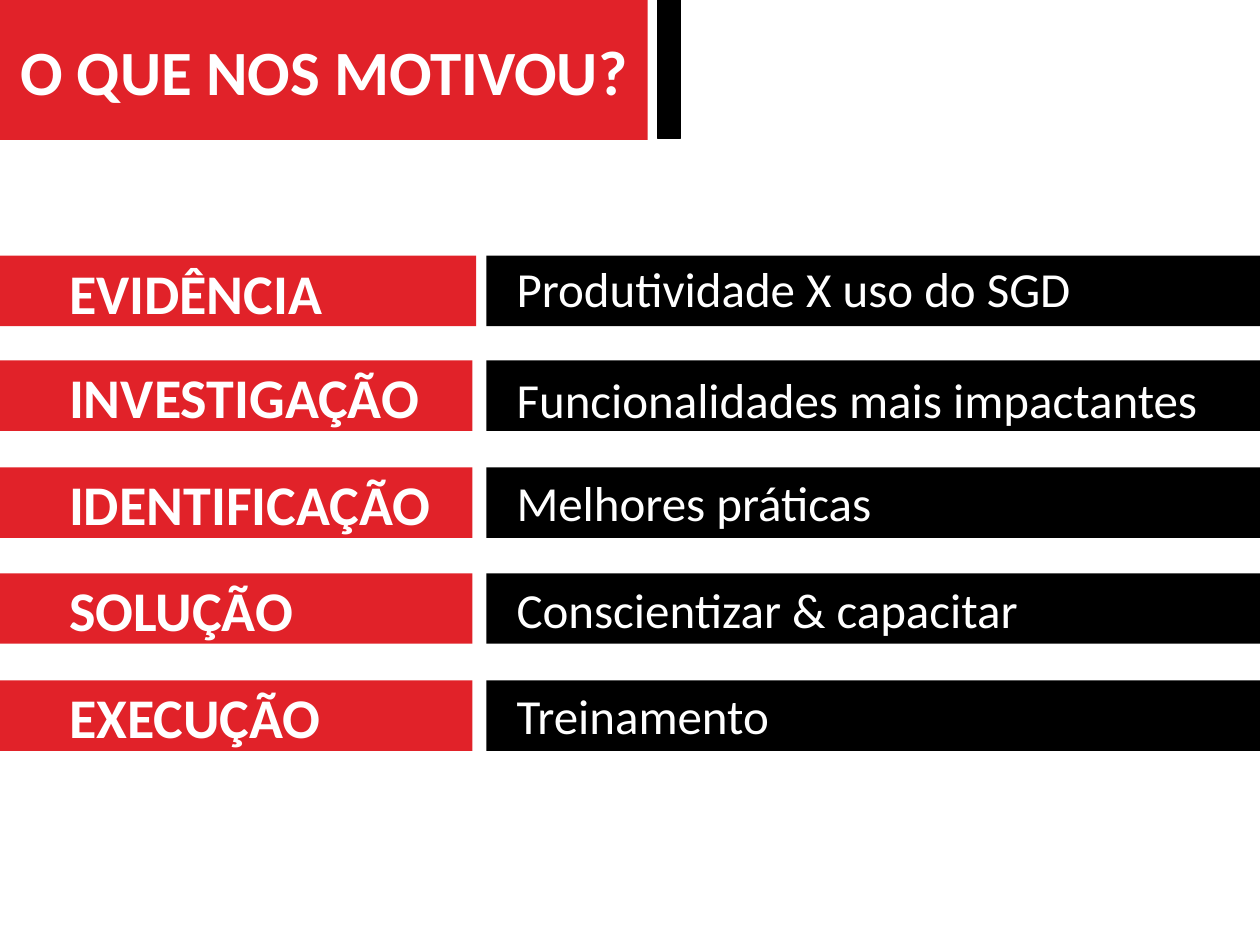
from pptx import Presentation
from pptx import util as u
from pptx.dml.color import RGBColor
from pptx.enum import shapes, text

RED = RGBColor(0xE1, 0x22, 0x29)
BLACK = RGBColor(0, 0, 0)
WHITE = RGBColor(0xFF, 0xFF, 0xFF)

# label, label width, bar top, detail, detail box (top, width, height)
ROWS = [
    ("EVIDÊNCIA", 4, 2.03, "Produtividade X uso do SGD", (2.07, 6.19, 0.49)),
    ("INVESTIGAÇÃO", 4.55, 2.86, "Funcionalidades mais impactantes", (2.98, 6.51, 0.43)),
    ("IDENTIFICAÇÃO", 3.25, 3.71, "Melhores práticas", (3.85, 3.53, 0.32)),
    ("SOLUÇÃO", 3.97, 4.55, "Conscientizar & capacitar", (4.75, 5.7, 0.23)),
    ("EXECUÇÃO", 2.83, 5.4, "Treinamento", (5.61, 5.11, 0.18)),
]


class Deck:
    font = "Calibri"

    def __init__(self, slide):
        self.slide = slide

    def bar(self, x, y, w, h, fill):
        box = self.slide.shapes.add_shape(
            shapes.MSO_SHAPE.RECTANGLE, *map(u.Inches, (x, y, w, h)))
        box.shadow.inherit = False
        box.fill.solid()
        box.fill.fore_color.rgb = fill
        box.line.fill.background()
        return box

    def letter(self, box, words, size, bold=False):
        """Put one styled white line into a shape and return its paragraph."""
        box.text_frame.text = words
        par = box.text_frame.paragraphs[0]
        font = par.runs[0].font
        font.name, font.size, font.bold = self.font, u.Pt(size), bold
        font.color.rgb = WHITE
        return par

    def title(self, words):
        box = self.bar(0, 0, 5.14, 1.11, RED)
        box.text_frame.vertical_anchor = text.MSO_ANCHOR.MIDDLE
        self.letter(box, words, 36, True).alignment = text.PP_ALIGN.CENTER
        edge = self.bar(5.22, 0, 0.18, 1.1, BLACK)
        edge.line.color.rgb = BLACK
        edge.line.width = u.Pt(1)

    def textbox(self, x, y, w, h):
        box = self.slide.shapes.add_textbox(*map(u.Inches, (x, y, w, h)))
        box.text_frame.word_wrap = True
        return box

    def label(self, words, y, w):
        box = self.textbox(0.45, y, w, 0.64)
        box.text_frame.auto_size = text.MSO_AUTO_SIZE.SHAPE_TO_FIT_TEXT
        self.letter(box, words, 32, True)

    def detail(self, words, y, w, h):
        box = self.textbox(4.03, y, w, h)
        frame = box.text_frame
        frame.vertical_anchor = text.MSO_ANCHOR.MIDDLE
        frame.margin_left = frame.margin_right = u.Inches(0.07)
        frame.margin_top = frame.margin_bottom = u.Inches(0.07)
        self.letter(box, words, 28).line_spacing = 0.9


def main():
    prs = Presentation()
    prs.slide_width, prs.slide_height = u.Inches(10), u.Inches(7.5)
    deck = Deck(prs.slides.add_slide(prs.slide_layouts[6]))
    for i, (label, width, top, detail, place) in enumerate(ROWS):
        first = i == 0
        deck.bar(3.86, top, 6.19 if first else 6.14, 0.56, BLACK)
        deck.bar(0, top, 3.78 if first else 3.75, 0.56, RED)
        deck.label(label, top - 0.03, width)
        deck.detail(detail, *place)
    deck.title("O QUE NOS MOTIVOU?")
    prs.save("out.pptx")


if __name__ == "__main__":
    main()
